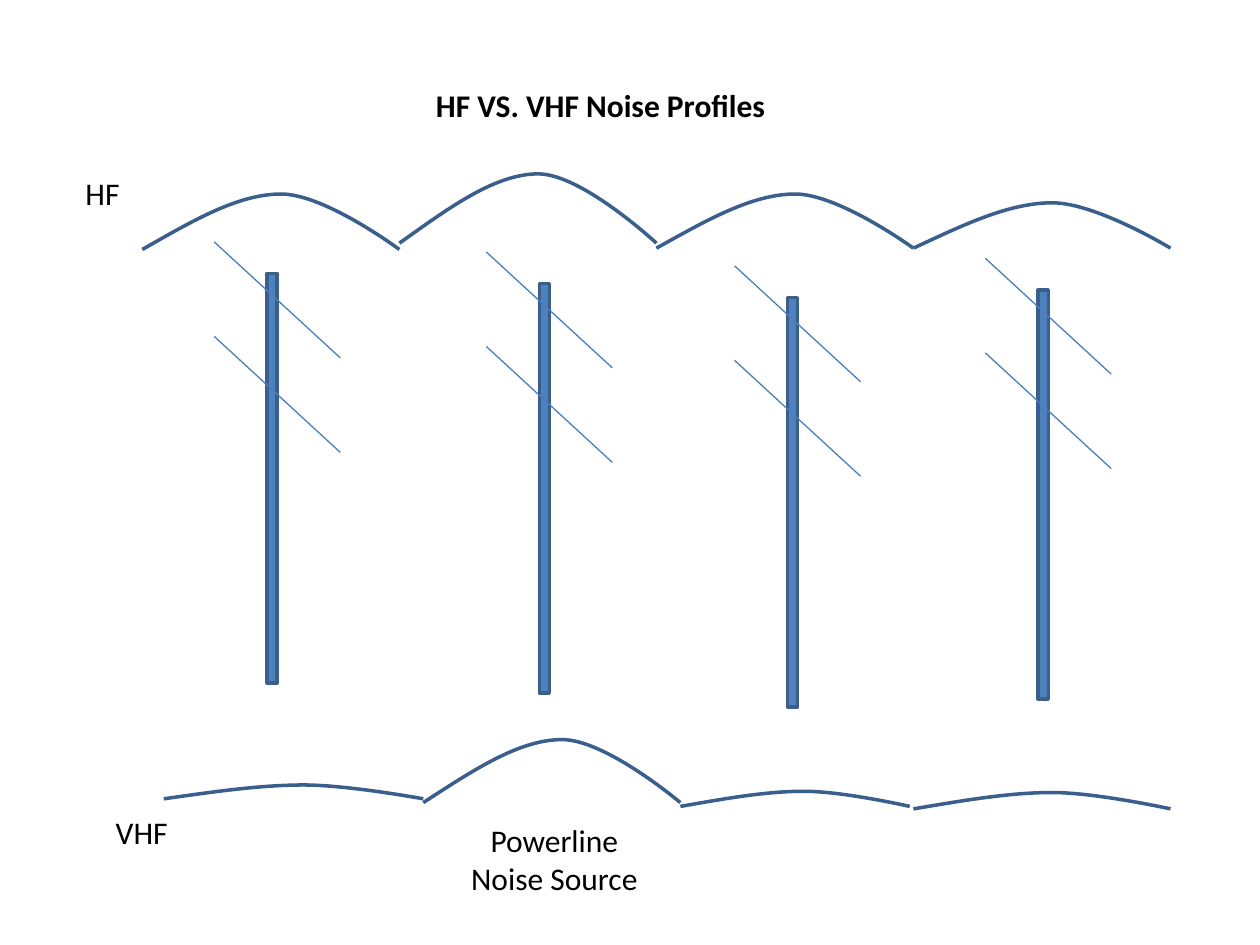
from dataclasses import dataclass
from typing import Any

from lxml import etree
from pptx import Presentation
from pptx.dml.color import RGBColor
from pptx.enum.shapes import MSO_CONNECTOR, MSO_SHAPE
from pptx.enum.text import MSO_ANCHOR, MSO_AUTO_SIZE, PP_ALIGN
from pptx.oxml.ns import qn
from pptx.util import Inches, Pt

RECTANGLE = MSO_SHAPE.RECTANGLE
STRAIGHT = MSO_CONNECTOR.STRAIGHT
TOP = MSO_ANCHOR.TOP
FIT_SHAPE = MSO_AUTO_SIZE.SHAPE_TO_FIT_TEXT
LEFT = PP_ALIGN.LEFT
CENTER = PP_ALIGN.CENTER

POLE_FILL = RGBColor(0x4F, 0x81, 0xBD)
OUTLINE = RGBColor(0x3A, 0x5F, 0x8C)
WIRE = RGBColor(0x4B, 0x7E, 0xBC)
BLACK = RGBColor(0, 0, 0)

POLES = [(1.70, 2.17), (3.86, 2.25), (5.83, 2.36), (7.82, 2.30)]
HF_HUMPS = [
    (1.13, 1.54, 2.04, 0.44),
    (3.17, 1.38, 2.04, 0.55),
    (5.21, 1.54, 2.04, 0.43),
    (7.25, 1.61, 2.04, 0.36),
]
VHF_HUMPS = [
    (1.30, 6.23, 2.06, 0.11),
    (5.40, 6.28, 1.82, 0.12),
    (7.25, 6.29, 2.04, 0.13),
    (3.36, 5.87, 2.04, 0.50),
]
HUMP_START = (0, 1)
HUMP_CONTROLS = [(0.19, 0.5), (0.37, 0), (0.54, 0), (0.71, 0), (1, 1), (1, 1)]


def write_text(box, text, bold=False, align=LEFT, size=18, color=BLACK, font="Calibri"):
    frame = box.text_frame
    frame.word_wrap = False
    frame.auto_size = FIT_SHAPE
    frame.vertical_anchor = TOP
    for index, line in enumerate(text.split("\n")):
        para = frame.paragraphs[0] if index == 0 else frame.add_paragraph()
        para.alignment = align
        span = para.add_run()
        span.text = line
        span.font.name = font
        span.font.size = Pt(size)
        span.font.bold = bold
        span.font.color.rgb = color


def bend(shape):
    segments = list(shape._element.iter(qn("a:lnTo")))
    for first in range(0, len(segments), 3):
        curve = etree.Element(qn("a:cubicBezTo"))
        segments[first].addprevious(curve)
        for segment in segments[first : first + 3]:
            curve.append(segment[0])
            segment.getparent().remove(segment)


@dataclass
class Sketch:
    page: Any
    outline_width: float = 2
    wire_width: float = 0.75

    def outline(self, shape):
        shape.shadow.inherit = False
        shape.line.color.rgb = OUTLINE
        shape.line.width = Pt(self.outline_width)

    def title(self, text, left, top, width, height):
        box = self.page.shapes.title
        box.left, box.top = Inches(left), Inches(top)
        box.width, box.height = Inches(width), Inches(height)
        write_text(box, text, bold=True)

    def label(self, text, left, top, width, height, **style):
        box = self.page.shapes.add_textbox(
            Inches(left), Inches(top), Inches(width), Inches(height)
        )
        write_text(box, text, **style)

    def wire(self, group, left, top):
        line = group.shapes.add_connector(
            STRAIGHT, Inches(left), Inches(top), Inches(left + 1), Inches(top + 0.92)
        )
        line.line.color.rgb = WIRE
        line.line.width = Pt(self.wire_width)
        etree.SubElement(line._element.spPr, qn("a:effectLst"))

    def pole(self, left, top):
        group = self.page.shapes.add_group_shape()
        post = group.shapes.add_shape(
            RECTANGLE, Inches(left + 0.42), Inches(top), Inches(0.08), Inches(3.25)
        )
        post.fill.solid()
        post.fill.fore_color.rgb = POLE_FILL
        self.outline(post)
        for drop in (0.5, -0.25):
            self.wire(group, left, top + drop)

    def hump(self, left, top, width, height):
        start, *controls = [
            (Inches(left + x * width), Inches(top + y * height))
            for x, y in [HUMP_START, *HUMP_CONTROLS]
        ]
        builder = self.page.shapes.build_freeform(*start)
        builder.add_line_segments(controls, close=False)
        curve = builder.convert_to_shape()
        bend(curve)
        curve.fill.background()
        self.outline(curve)


def main():
    deck = Presentation()
    deck.slide_width, deck.slide_height = Inches(10), Inches(7.5)
    sketch = Sketch(deck.slides.add_slide(deck.slide_layouts[5]))

    sketch.title("HF VS. VHF Noise Profiles", 3.36, 0.63, 2.84, 0.4)
    for pole in POLES:
        sketch.pole(*pole)
    sketch.label("HF", 0.58, 1.33, 0.48, 0.4)
    sketch.label("VHF", 0.82, 6.4, 0.62, 0.4)
    for hump in HF_HUMPS + VHF_HUMPS:
        sketch.hump(*hump)
    sketch.label("Powerline\nNoise Source", 3.63, 6.47, 1.54, 0.71, align=CENTER)

    deck.save("out.pptx")


if __name__ == "__main__":
    main()
